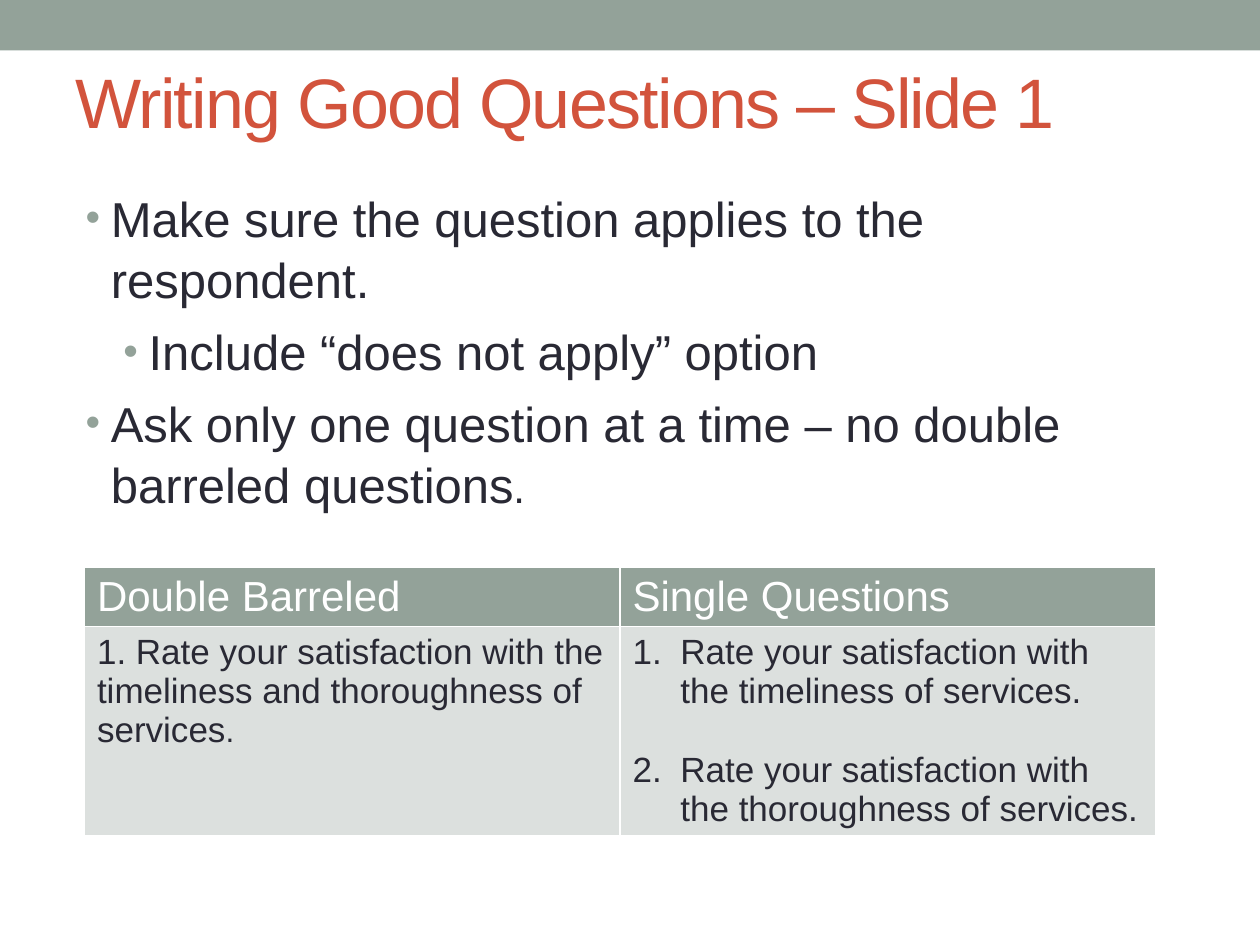
from lxml.etree import SubElement
from pptx import Presentation
from pptx.dml.color import RGBColor
from pptx.enum.shapes import MSO_SHAPE
from pptx.enum.text import MSO_ANCHOR, MSO_AUTO_SIZE, PP_ALIGN
from pptx.oxml.ns import qn
from pptx.util import Inches, Pt

COLS, ROWS = 100, 75
WIDTH, HEIGHT = Inches(10), Inches(7.5)
SAGE, RED, INK, PALE, WHITE = "93A299", "D2533C", "292934", "DCE0DE", "FFFFFF"
FONT = "Arial"


def grid(col, row, cols, rows):
    return (int(WIDTH * col / COLS), int(HEIGHT * row / ROWS),
            int(WIDTH * cols / COLS), int(HEIGHT * rows / ROWS))


def paint(target, color):
    target.solid()
    target.fore_color.rgb = RGBColor.from_string(color)


def add_run(p, text, size, color):
    r = p.add_run()
    r.text = text
    r.font.name = FONT
    r.font.size = Pt(size)
    r.font.bold = False
    paint(r.font.fill, color)
    return r


def next_paragraph(tf, first):
    return tf.paragraphs[0] if first else tf.add_paragraph()


def indent(p, left, hanging):
    pPr = p._p.get_or_add_pPr()
    pPr.set("marL", str(Inches(left)))
    pPr.set("indent", str(-Inches(hanging)))
    return pPr


def place(sp, box, anchor):
    sp.left, sp.top, sp.width, sp.height = grid(*box)
    tf = sp.text_frame
    tf.word_wrap = True
    tf.auto_size = MSO_AUTO_SIZE.NONE
    tf.vertical_anchor = anchor
    return tf


def add_band(s):
    sp = s.shapes.add_shape(MSO_SHAPE.RECTANGLE, *grid(0, 0, COLS, 4))
    sp.shadow.inherit = False
    paint(sp.fill, SAGE)
    sp.line.fill.background()


def fill_title(s, text):
    tf = place(s.shapes.title, (5, 1.7, 90, 12.5), MSO_ANCHOR.MIDDLE)
    p = tf.paragraphs[0]
    p.alignment = PP_ALIGN.LEFT
    r = add_run(p, text, 40, RED)
    r.font._element.set("spc", "-100")


def fill_bullets(s, items):
    tf = place(s.placeholders[1], (5.8, 14.2, 90, 33.3), MSO_ANCHOR.TOP)
    for i, (level, runs) in enumerate(items):
        p = next_paragraph(tf, i == 0)
        p.level = level
        p.line_spacing = 1.05
        p.space_before = Pt(5.6)
        pPr = indent(p, 0.2 + 0.3 * level, 0.2)
        color = SubElement(pPr, qn("a:buClr"))
        SubElement(color, qn("a:srgbClr"), val=SAGE)
        SubElement(pPr, qn("a:buSzPct"), val="85000")
        SubElement(pPr, qn("a:buFont"), typeface=FONT)
        SubElement(pPr, qn("a:buChar"), char="•")
        for text, size in runs:
            add_run(p, text, size, INK)


def style_cell(cell, color):
    tcPr = cell._tc.get_or_add_tcPr()
    for side in ("L", "R", "T", "B"):
        ln = SubElement(tcPr, qn(f"a:ln{side}"), w=str(Pt(1)))
        SubElement(SubElement(ln, qn("a:solidFill")), qn("a:srgbClr"), val=WHITE)
    paint(cell.fill, color)


def number_lines(tf, lines):
    for i, text in enumerate(lines):
        p = next_paragraph(tf, i == 0)
        if i:
            p.space_before = Pt(23)
        pPr = indent(p, 0.38, 0.38)
        SubElement(pPr, qn("a:buFont"), typeface=FONT)
        SubElement(pPr, qn("a:buAutoNum"), type="arabicPeriod")
        add_run(p, text, 20, INK)


def add_comparison(s, headers, double, singles):
    table = s.shapes.add_table(2, 2, *grid(6.7, 45, 85, 21.1)).table
    table.rows[0].height = Inches(0.46)
    table.rows[1].height = Inches(1.65)
    for col, text in enumerate(headers):
        style_cell(table.cell(0, col), SAGE)
        style_cell(table.cell(1, col), PALE)
        add_run(table.cell(0, col).text_frame.paragraphs[0], text, 24, WHITE)
    p = table.cell(1, 0).text_frame.paragraphs[0]
    for text, size in double:
        add_run(p, text, size, INK)
    number_lines(table.cell(1, 1).text_frame, singles)


def main():
    prs = Presentation()
    prs.slide_width, prs.slide_height = WIDTH, HEIGHT
    s = prs.slides.add_slide(prs.slide_layouts[1])
    paint(s.background.fill, WHITE)
    add_band(s)
    fill_title(s, "Writing Good Questions – Slide 1")
    fill_bullets(s, [
        (0, [("Make sure the question applies to the respondent.", 28)]),
        (1, [("Include “does not apply” option", 28)]),
        (0, [("Ask only one question at a time – no double barreled questions", 28),
             (".", 24)]),
    ])
    add_comparison(
        s,
        ["Double Barreled", "Single Questions"],
        [("1. Rate your satisfaction with the timeliness and thoroughness of services", 20),
         (".", 18)],
        ["Rate your satisfaction with the timeliness of services.",
         "Rate your satisfaction with the thoroughness of services."],
    )
    prs.save("out.pptx")


if __name__ == "__main__":
    main()
